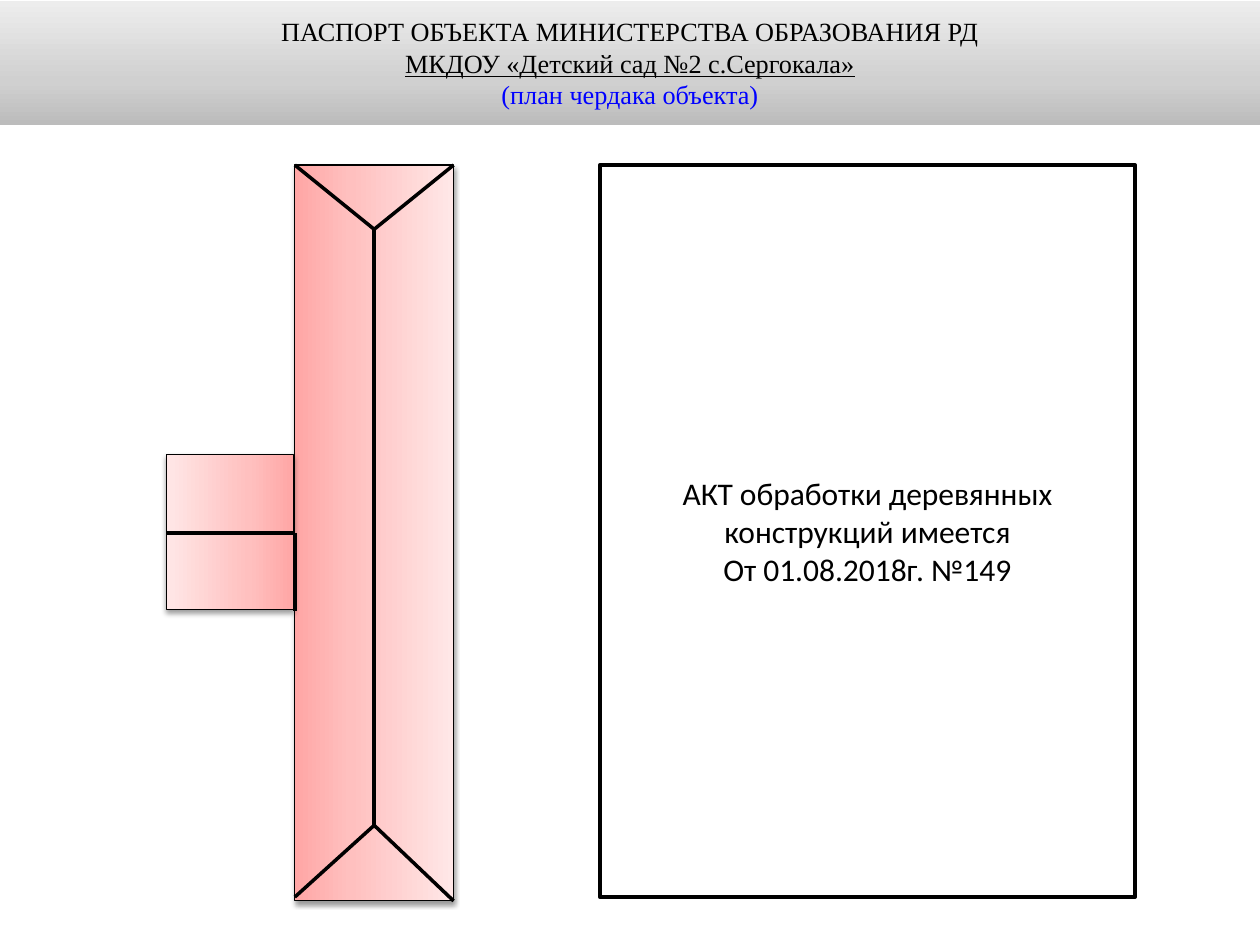
from copy import deepcopy

from lxml import etree
from pptx import Presentation
from pptx.dml.color import RGBColor
from pptx.enum.shapes import MSO_CONNECTOR, MSO_SHAPE
from pptx.enum.text import MSO_ANCHOR, MSO_AUTO_SIZE, PP_ALIGN
from pptx.oxml import parse_xml
from pptx.oxml.ns import nsdecls, qn
from pptx.util import Inches, Pt

RECTANGLE = MSO_SHAPE.RECTANGLE
STRAIGHT = MSO_CONNECTOR.STRAIGHT
CENTER = PP_ALIGN.CENTER
MIDDLE = MSO_ANCHOR.MIDDLE
NO_AUTOFIT = MSO_AUTO_SIZE.NONE

BLACK = RGBColor(0x00, 0x00, 0x00)
WHITE = RGBColor(0xFF, 0xFF, 0xFF)
BLUE = RGBColor(0x00, 0x00, 0xFF)
ROOF_COLORS = [RGBColor(0xFF, 0xA6, 0xA5), RGBColor(0xFF, 0xC0, 0xBF), RGBColor(0xFF, 0xE7, 0xE7)]
HEADER_COLORS = [RGBColor(0xBC, 0xBC, 0xBC), RGBColor(0xD0, 0xD0, 0xD0), RGBColor(0xED, 0xED, 0xED)]
STOP_POSITIONS = [0, 0.35, 1]


def fill_gradient(shape, colors, angle):
    """Fill with three stops; the angle runs counter-clockwise from left to right."""
    shape.fill.gradient()
    shape.fill.gradient_angle = angle
    stop_list = shape._element.spPr.find(qn("a:gradFill")).find(qn("a:gsLst"))
    stop_list.append(deepcopy(stop_list[0]))
    for stop, color, position in zip(shape.fill.gradient_stops, colors, STOP_POSITIONS):
        stop.color.rgb = color
        stop.position = position


presentation = Presentation()
presentation.slide_width = Inches(10)
presentation.slide_height = Inches(7.5)
slide = presentation.slides.add_slide(presentation.slide_layouts[5])

# Header
header = slide.shapes.title
header.left, header.top = Inches(0), Inches(0.01)
header.width, header.height = Inches(10), Inches(0.98)
fill_gradient(header, HEADER_COLORS, 90)
header_frame = header.text_frame
header_frame.text = (
    "ПАСПОРТ ОБЪЕКТА МИНИСТЕРСТВА ОБРАЗОВАНИЯ РД\n"
    "МКДОУ «Детский сад №2 с.Сергокала»\n"
    "(план чердака объекта)"
)
header_frame.auto_size = NO_AUTOFIT
header_frame.vertical_anchor = MIDDLE
header_styles = [(BLACK, False), (BLACK, True), (BLUE, False)]
for paragraph, (color, underline) in zip(header_frame.paragraphs, header_styles):
    paragraph.alignment = CENTER
    paragraph.font.name = "Times New Roman"
    paragraph.font.size = Pt(15)
    paragraph.font.color.rgb = color
    paragraph.font.underline = underline

# Roof: main building and annex
roof_parts = [
    (2.34, 1.31, 1.26, 5.84, 0),
    (1.32, 3.61, 1.01, 1.23, 180),
]
for left, top, width, height, angle in roof_parts:
    roof = slide.shapes.add_shape(RECTANGLE, Inches(left), Inches(top), Inches(width), Inches(height))
    fill_gradient(roof, ROOF_COLORS, angle)
    roof.line.color.rgb = BLACK
    roof.line.width = Pt(0)
    roof.shadow.inherit = False
    roof._element.spPr.find(qn("a:effectLst")).append(parse_xml(
        f'<a:outerShdw {nsdecls("a")} blurRad="40000" dist="20000" dir="5400000" rotWithShape="0">'
        '<a:srgbClr val="000000"><a:alpha val="38000"/></a:srgbClr></a:outerShdw>'
    ))

# Ridges and hips
roof_lines = [
    (2.97, 1.82, 2.97, 6.55),
    (3.6, 1.31, 2.97, 1.82),
    (2.34, 1.31, 2.97, 1.82),
    (2.97, 6.55, 3.6, 7.15),
    (2.97, 6.55, 2.34, 7.12),
    (2.34, 4.23, 1.32, 4.23),
    (2.34, 4.85, 2.34, 4.23),
]
for ends in roof_lines:
    ridge = slide.shapes.add_connector(STRAIGHT, *[Inches(value) for value in ends])
    ridge.line.color.rgb = BLACK
    ridge.line.width = Pt(0)
    etree.SubElement(ridge._element.spPr, qn("a:effectLst"))

# Treatment certificate
certificate = slide.shapes.add_shape(RECTANGLE, Inches(4.76), Inches(1.31), Inches(4.25), Inches(5.81))
certificate.shadow.inherit = False
certificate.fill.solid()
certificate.fill.fore_color.rgb = WHITE
certificate.line.color.rgb = BLACK
certificate.line.width = Pt(2)
certificate_frame = certificate.text_frame
certificate_frame.word_wrap = True
certificate_frame.vertical_anchor = MIDDLE
certificate_frame.text = "АКТ обработки деревянных конструкций имеется\nОт 01.08.2018г. №149"
for paragraph in certificate_frame.paragraphs:
    paragraph.alignment = CENTER
    paragraph.font.name = "Calibri"
    paragraph.font.size = Pt(18)
    paragraph.font.color.rgb = BLACK

presentation.save("out.pptx")
